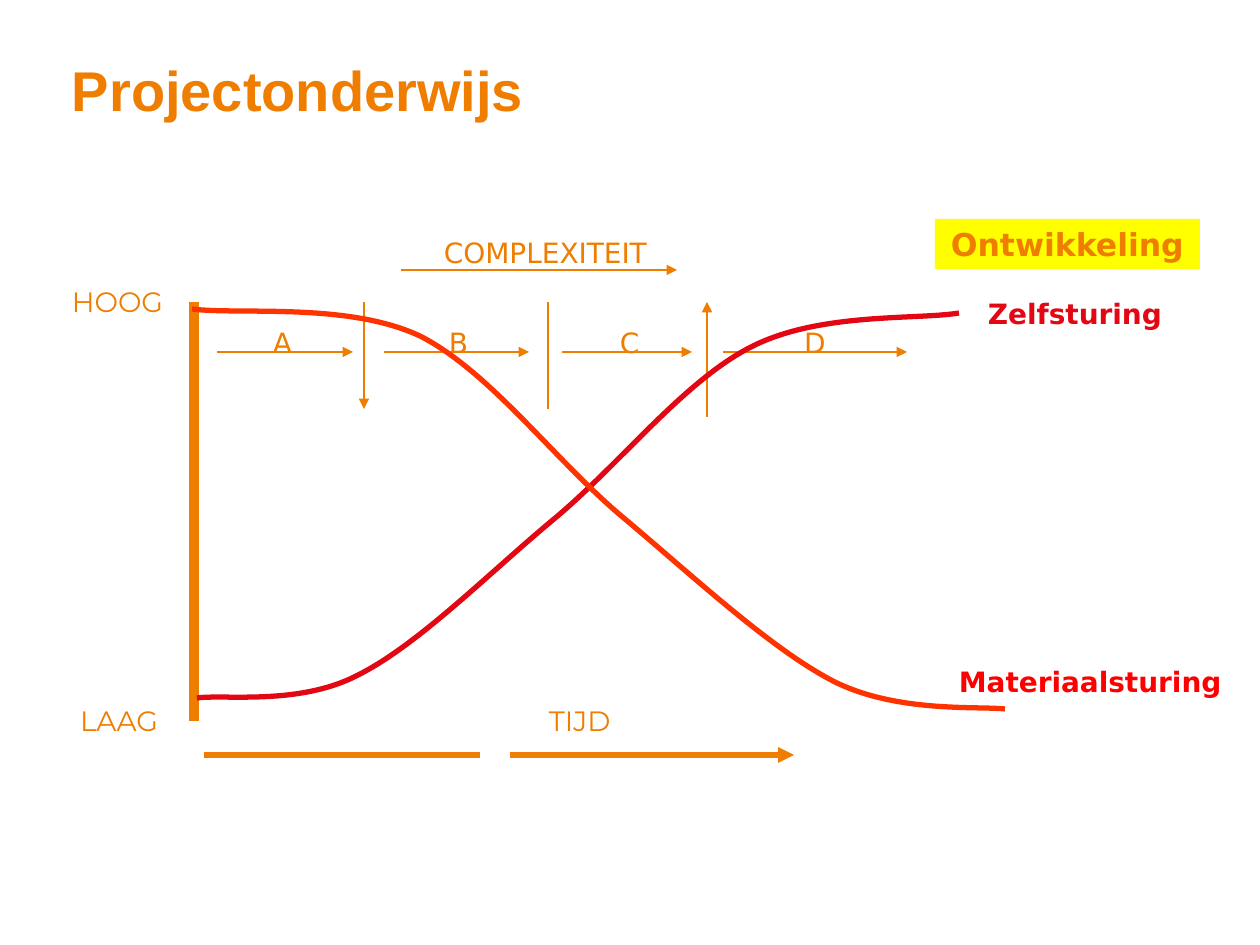
import dataclasses
import pptx
import pptx.dml.color
import pptx.enum.shapes
import pptx.enum.text
import pptx.oxml.ns
import pptx.oxml.xmlchemy
import pptx.util

UNIT = 914400 / 126


@dataclasses.dataclass(frozen=True)
class Theme:
    main: str = "EF7D00"
    mark: str = "FFFF00"
    rise: str = "E30613"
    note: str = "FF0000"
    fall: str = "FF3300"
    plain: str = "Montserrat"
    sans: str = "DejaVu Sans"
    head: str = "Arial"
    small: int = 16
    mid: int = 18
    large: int = 32
    thin: float = 0.75
    thick: int = 3
    axis: int = 6


THEME = Theme()


def emu(num):
    return round(num * UNIT)


def rgb(code):
    return pptx.dml.color.RGBColor.from_string(code)


def node(tag):
    return pptx.oxml.xmlchemy.OxmlElement(tag)


def text(shapes, words, left, top, width, high=47, font=THEME.sans,
         size=THEME.small, color=THEME.main, bold=False, fill=None,
         inset=13, center=False, middle=False, space=None):
    area = [emu(num) for num in (left, top, width, high)]
    if fill:
        box = shapes.add_shape(pptx.enum.shapes.MSO_SHAPE.RECTANGLE, *area)
        box.shadow.inherit = False
        box.fill.solid()
        box.fill.fore_color.rgb = rgb(fill)
        box.line.fill.background()
    else:
        box = shapes.add_textbox(*area)
    frame = box.text_frame
    frame.word_wrap = True
    frame.margin_left = frame.margin_right = emu(inset)
    anchor = pptx.enum.text.MSO_ANCHOR
    frame.vertical_anchor = anchor.MIDDLE if middle else anchor.TOP
    para = frame.paragraphs[0]
    align = pptx.enum.text.PP_ALIGN
    para.alignment = align.CENTER if center else align.LEFT
    para.line_spacing = space
    run = para.add_run()
    run.text = words
    run.font.name = font
    run.font.size = pptx.util.Pt(size)
    run.font.bold = bold
    run.font.color.rgb = rgb(color)


def line(shapes, start, end, width=THEME.thin, tip=False):
    kind = pptx.enum.shapes.MSO_CONNECTOR.STRAIGHT
    ends = [emu(num) for num in (*start, *end)]
    link = shapes.add_connector(kind, *ends)
    link.line.color.rgb = rgb(THEME.main)
    link.line.width = pptx.util.Pt(width)
    if tip:
        tail = node("a:tailEnd")
        tail.set("type", "triangle")
        link.line._get_or_add_ln().append(tail)
    link._element.spPr.append(node("a:effectLst"))


def curve(shapes, left, top, points, color):
    pen = shapes.build_freeform(*points[0], scale=UNIT)
    pen.add_line_segments(points[1:], close=False)
    shape = pen.convert_to_shape(emu(left), emu(top))
    shape.shadow.inherit = False
    shape.fill.background()
    shape.line.color.rgb = rgb(color)
    shape.line.width = pptx.util.Pt(THEME.thick)
    route = next(shape._element.iter(pptx.oxml.ns.qn("a:path")))
    steps = list(route)[1:]
    for start in range(0, len(steps), 3):
        bend = node("a:cubicBezTo")
        for step in steps[start:start + 3]:
            bend.append(step[0])
            route.remove(step)
        route.append(bend)


def title(shapes, left, top):
    text(shapes, "Projectonderwijs", left, top, 1160, 156, font=THEME.head,
         size=THEME.large, bold=True, middle=True, space=0.9)


def axes(shapes, left, top):
    line(shapes, (left + 135, top + 24), (left + 135, top + 443), THEME.axis)
    for words, x, y in (("HOOG", 0, 0), ("LAAG", 8, 419), ("TIJD", 477, 419)):
        text(shapes, words, left + x, top + y, 120, font=THEME.plain)
    base = top + 477
    for start, end, tip in ((145, 421, False), (451, 735, True)):
        line(shapes, (left + start, base), (left + end, base),
             THEME.thick, tip)


def trend(shapes, left, top):
    text(shapes, "COMPLEXITEIT", left + 30, top, 246)
    line(shapes, (left, top + 41), (left + 276, top + 41), tip=True)


def phases(shapes, left, top):
    parts = shapes.add_group_shape().shapes
    for x, start, end, tip in ((147, 0, 107, True), (331, 0, 107, False),
                               (490, 115, 0, True)):
        line(parts, (left + x, top + start), (left + x, top + end), tip=tip)
    for name, start, end, x in (("A", 0, 136, 43), ("B", 167, 312, 219),
                                ("C", 345, 475, 390), ("D", 506, 690, 574)):
        line(parts, (left + start, top + 50), (left + end, top + 50), tip=True)
        text(parts, name, left + x, top + 17, 31)


def curves(shapes, left, top):
    rise = [(5, 396), (31, 392), (107, 404), (166, 373), (226, 343),
            (297, 271), (362, 217), (428, 162), (492, 79), (559, 45),
            (627, 10), (724, 18), (767, 11)]
    fall = [(813, 407), (786, 404), (706, 411), (643, 380), (580, 348),
            (502, 275), (433, 217), (364, 160), (299, 70), (228, 34),
            (156, 0), (47, 13), (0, 7)]
    for points, color in ((rise, THEME.rise), (fall, THEME.fall)):
        curve(shapes, left, top, points, color)


def legend(shapes, left, top):
    text(shapes, "Ontwikkeling", left, top, 265, 50, size=THEME.mid,
         bold=True, fill=THEME.mark, center=True)
    text(shapes, "Zelfsturing", left + 40, top + 71, 212,
         color=THEME.rise, bold=True)
    text(shapes, "Materiaalsturing", left + 24, top + 439, 287,
         color=THEME.note, bold=True, inset=0)


def main():
    deck = pptx.Presentation()
    deck.slide_width = emu(1260)
    deck.slide_height = emu(945)
    shapes = deck.slides.add_slide(deck.slide_layouts[6]).shapes
    title(shapes, 59, 15)
    axes(shapes, 59, 278)
    trend(shapes, 401, 229)
    phases(shapes, 217, 302)
    legend(shapes, 935, 219)
    curves(shapes, 192, 302)
    deck.save("out.pptx")


if __name__ == "__main__":
    main()
